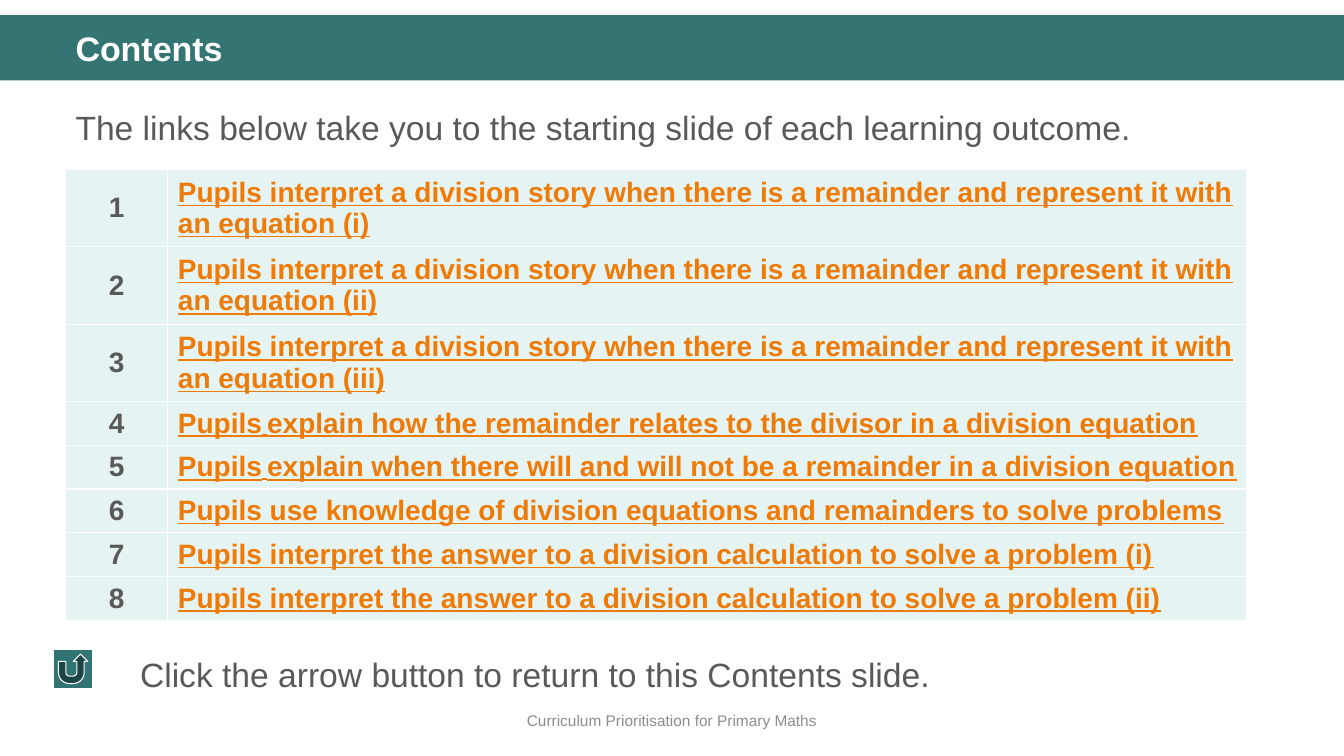
"""Build the contents slide of a division unit."""
from typing import NamedTuple

from lxml import etree
from pptx import Presentation, util as u
from pptx.dml.color import RGBColor
from pptx.enum import shapes, text
from pptx.oxml.ns import qn

GREY, WHITE, TEAL, MINT, AMBER = "595959", "FFFFFF", "347574", "E5F3F2", "EE7B08"
EDGES = ("a:lnL", "a:lnR", "a:lnT", "a:lnB")
LEFT = text.PP_ALIGN.LEFT
MID = text.PP_ALIGN.CENTER


class Box(NamedTuple):
    x: float
    y: float
    w: float
    h: float

    def cm(self) -> list:
        return [u.Cm(n) for n in self]


class Goal(NamedTuple):
    text: str
    thin: bool = False


class Look(NamedTuple):
    size: float
    color: str = GREY
    bold: bool = False
    line: bool = False
    align: text.PP_ALIGN = LEFT


STORY = "interpret a division story when there is a remainder and represent it with an equation"
SOLVE = "interpret the answer to a division calculation to solve a problem"
GOALS = [
    *(Goal(f"{STORY} ({n})") for n in ("i", "ii", "iii")),
    Goal("explain how the remainder relates to the divisor in a division equation", True),
    Goal("explain when there will and will not be a remainder in a division equation", True),
    Goal("use knowledge of division equations and remainders to solve problems"),
    *(Goal(f"{SOLVE} ({n})") for n in ("i", "ii")),
]


def rgb(code: str) -> RGBColor:
    return RGBColor.from_string(code)


def style(para, look: Look) -> None:
    para.alignment = look.align
    font = para.font
    font.name, font.size = "Arial", u.Pt(look.size)
    font.bold, font.underline = look.bold, look.line
    font.color.rgb = rgb(look.color)


def write(frame, words: str, look: Look) -> None:
    frame.word_wrap = True
    para = frame.paragraphs[0]
    para.text = words
    style(para, look)


def place(shape, box: Box) -> None:
    shape.left, shape.top, shape.width, shape.height = box.cm()


def label(slide, box: Box, words: str, look: Look, anchor=text.MSO_ANCHOR.TOP) -> None:
    frame = slide.shapes.add_textbox(*box.cm()).text_frame
    frame.vertical_anchor = anchor
    write(frame, words, look)


def block(slide, kind, box: Box, fill: str):
    shape = slide.shapes.add_shape(kind, *box.cm())
    shape.shadow.inherit = False
    shape.fill.solid()
    shape.fill.fore_color.rgb = rgb(fill)
    shape.line.fill.background()
    return shape


def paint(cell) -> None:
    props = cell._tc.get_or_add_tcPr()
    for edge in EDGES:
        line = etree.SubElement(props, qn(edge), w=str(u.Pt(1)))
        fill = etree.SubElement(line, qn("a:solidFill"))
        etree.SubElement(fill, qn("a:srgbClr"), val=WHITE)
    cell.fill.solid()
    cell.fill.fore_color.rgb = rgb(MINT)
    cell.vertical_anchor = text.MSO_ANCHOR.MIDDLE


def fill_goal(cell, goal: Goal) -> None:
    para = cell.text_frame.paragraphs[0]
    style(para, Look(20, AMBER, True, True))
    if not goal.thin:
        para.add_run().text = "Pupils " + goal.text
        return
    lead, gap, rest = (para.add_run() for _ in range(3))
    lead.text, gap.text, rest.text = "Pupils", " ", goal.text
    gap.font.name, gap.font.size, gap.font.bold = "Calibri", u.Pt(16), False


def add_goals(slide) -> None:
    high = 1.04
    box = Box(1.65, 4.27, 29.77, high * len(GOALS))
    table = slide.shapes.add_table(len(GOALS), 2, *box.cm()).table
    table.first_row = table.horz_banding = False
    table.columns[0].width, table.columns[1].width = u.Cm(2.58), u.Cm(27.19)
    for num, (row, goal) in enumerate(zip(table.rows, GOALS), 1):
        row.height = u.Cm(high)
        for cell in row.cells:
            paint(cell)
        write(row.cells[0].text_frame, str(num), Look(20, bold=True, align=MID))
        fill_goal(row.cells[1], goal)


def add_heads(slide) -> None:
    title, body = slide.placeholders
    band = block(slide, shapes.MSO_SHAPE.RECTANGLE, Box(0, 0.38, 33.87, 1.65), TEAL)
    title.element.addprevious(band.element)
    place(title, Box(1.65, 0.69, 30.94, 1.19))
    write(title.text_frame, "Contents", Look(24.3, WHITE, True))
    title.text_frame.paragraphs[0].line_spacing = 0.9
    place(body, Box(1.65, 2.36, 30.94, 8.92))
    para = body.text_frame.paragraphs[0]
    para.line_spacing, para.space_before = 1.2, u.Pt(0)
    props = para._p.get_or_add_pPr()
    props.set("marL", "0")
    props.set("indent", "0")
    etree.SubElement(props, qn("a:buNone"))
    words = "The links below take you to the starting slide of each learning outcome."
    write(body.text_frame, words, Look(24))
    for shape in (title, body):
        shape.text_frame.auto_size = text.MSO_AUTO_SIZE.NONE


def main() -> None:
    deck = Presentation()
    deck.slide_width, deck.slide_height = u.Cm(33.87), u.Cm(19.05)
    slide = deck.slides.add_slide(deck.slide_layouts[1])
    add_heads(slide)
    label(slide, Box(0, 17.65, 33.87, 1.02), "Curriculum Prioritisation for Primary Maths",
          Look(11, "8C8C8C", align=MID), text.MSO_ANCHOR.MIDDLE)
    add_goals(slide)
    back = block(slide, shapes.MSO_SHAPE.ACTION_BUTTON_RETURN, Box(1.35, 16.36, 0.99, 0.99), "327473")
    back.line.color.rgb = rgb(WHITE)
    back.line.width = u.Pt(0.75)
    label(slide, Box(3.28, 16.36, 28.75, 1.27),
          "Click the arrow button to return to this Contents slide.", Look(24))
    deck.save("out.pptx")


if __name__ == "__main__":
    main()
